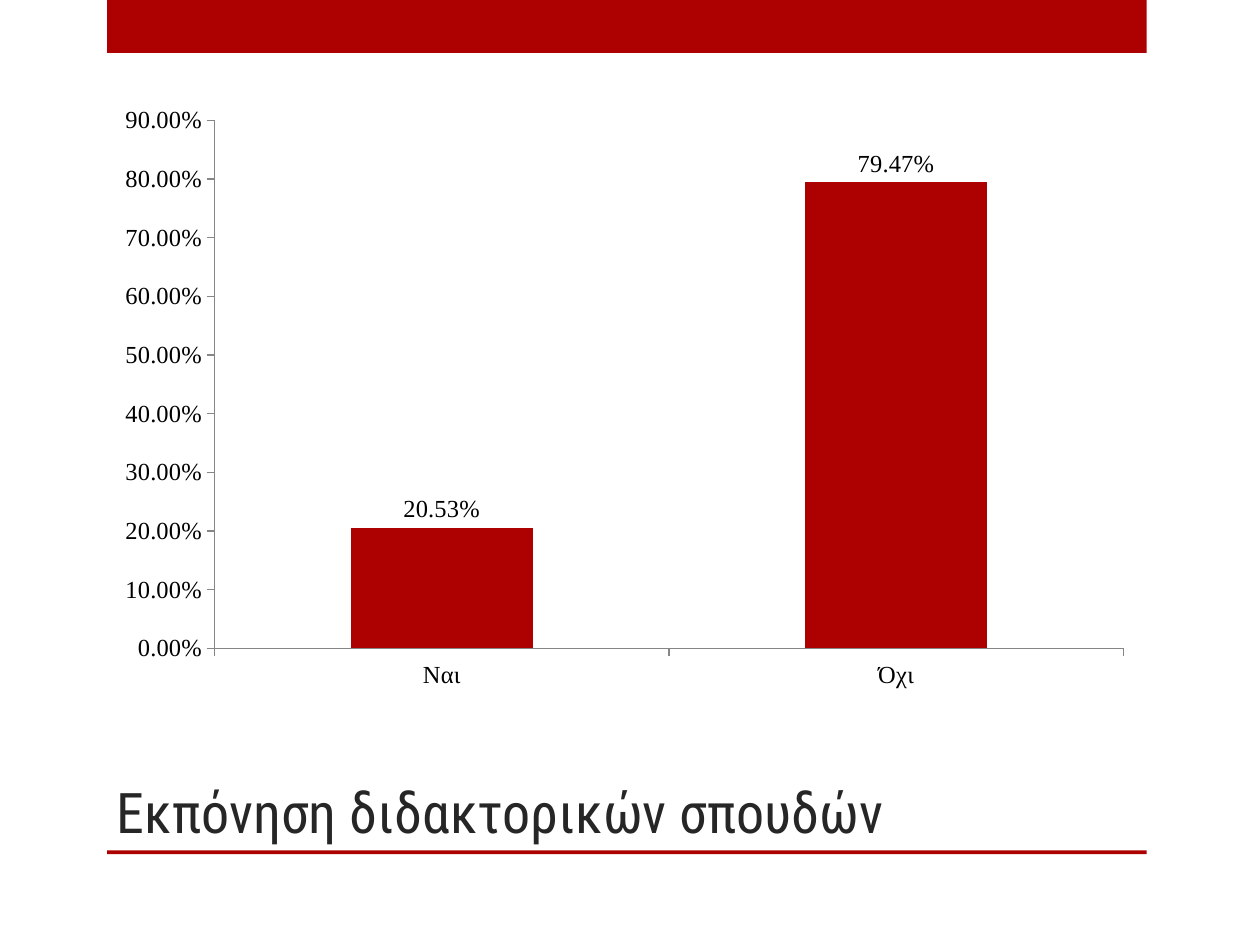
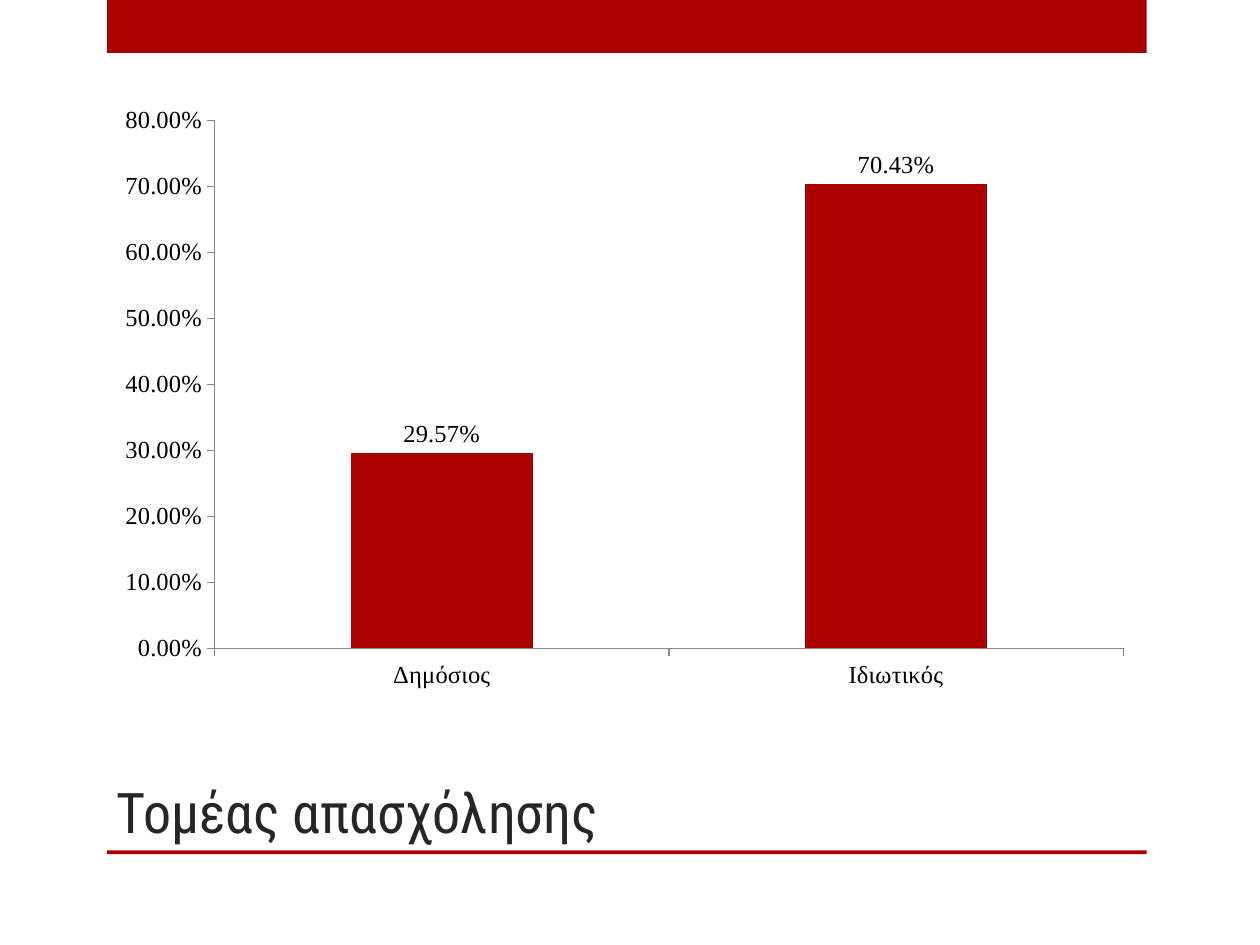
from pptx import Presentation
from pptx.chart.data import CategoryChartData
from pptx.dml.color import RGBColor
from pptx.enum import chart as ch, shapes, text
from pptx.util import Inches, Pt

RED, INK, BLACK, GREY = "AD0101", "262626", "000000", "868686"
HEAD, BODY = "Roboto Condensed", "Times New Roman"
PERCENT = "0.00%"
CHARTS = [
    ("Εκπόνηση διδακτορικών σπουδών", ("Ναι", "Όχι"), (0.2053, 0.7947), 0.9),
    ("Τομέας απασχόλησης", ("Δημόσιος", "Ιδιωτικός"), (0.2957, 0.7043), 0.8),
]


def color(code):
    return RGBColor.from_string(code)


def box(*sides):
    return [Inches(side) for side in sides]


def style(font, name, size, code):
    font.name, font.size = name, Pt(size)
    font.color.rgb = color(code)


def add_band(slide, top, height):
    band = slide.shapes.add_shape(
        shapes.MSO_SHAPE.RECTANGLE, *box(0.85, top, 8.25, height))
    band.shadow.inherit = False
    band.fill.solid()
    band.fill.fore_color.rgb = color(RED)
    band.line.fill.background()


def add_title(slide, words):
    frame = slide.shapes.add_textbox(*box(0.83, 5.64, 7.42, 1.11)).text_frame
    frame.word_wrap = True
    frame.vertical_anchor = text.MSO_ANCHOR.BOTTOM
    run = frame.paragraphs[0].add_run()
    run.text = words
    style(run.font, HEAD, 32, INK)


def style_axis(axis):
    axis.has_major_gridlines = False
    axis.major_tick_mark = ch.XL_TICK_MARK.OUTSIDE
    axis.minor_tick_mark = ch.XL_TICK_MARK.NONE
    axis.format.line.color.rgb = color(GREY)
    axis.format.line.width = Pt(0.75)
    style(axis.tick_labels.font, BODY, 14, BLACK)


def add_chart(slide, names, shares, top):
    """Add red columns on a percent scale that ends at top."""
    data = CategoryChartData(number_format=PERCENT)
    data.categories = names
    data.add_series("Series 1", shares)
    chart = slide.shapes.add_chart(
        ch.XL_CHART_TYPE.COLUMN_CLUSTERED,
        *box(0.83, 0.75, 8.25, 4.81), data).chart
    chart.has_legend = False
    chart.has_title = False
    style(chart.font, BODY, 18, BLACK)

    scale = chart.value_axis
    for axis in (chart.category_axis, scale):
        style_axis(axis)
    scale.minimum_scale, scale.maximum_scale = 0, top
    scale.major_unit = 0.1
    scale.tick_labels.number_format = PERCENT
    scale.tick_labels.number_format_is_linked = False

    plot = chart.plots[0]
    plot.gap_width = 150
    plot.vary_by_categories = False
    bars = plot.series[0]
    bars.format.fill.solid()
    bars.format.fill.fore_color.rgb = color(RED)
    labels = bars.data_labels
    labels.show_value = True
    labels.position = ch.XL_LABEL_POSITION.OUTSIDE_END
    labels.number_format = PERCENT
    labels.number_format_is_linked = False
    style(labels.font, BODY, 14, BLACK)


def main():
    deck = Presentation()
    deck.slide_width, deck.slide_height = box(10, 7.5)
    for title, names, shares, top in CHARTS:
        slide = deck.slides.add_slide(deck.slide_layouts[6])
        add_band(slide, 0, 0.42)
        add_band(slide, 6.75, 0.03)
        add_title(slide, title)
        add_chart(slide, names, shares, top)
    deck.save("out.pptx")


if __name__ == "__main__":
    main()
